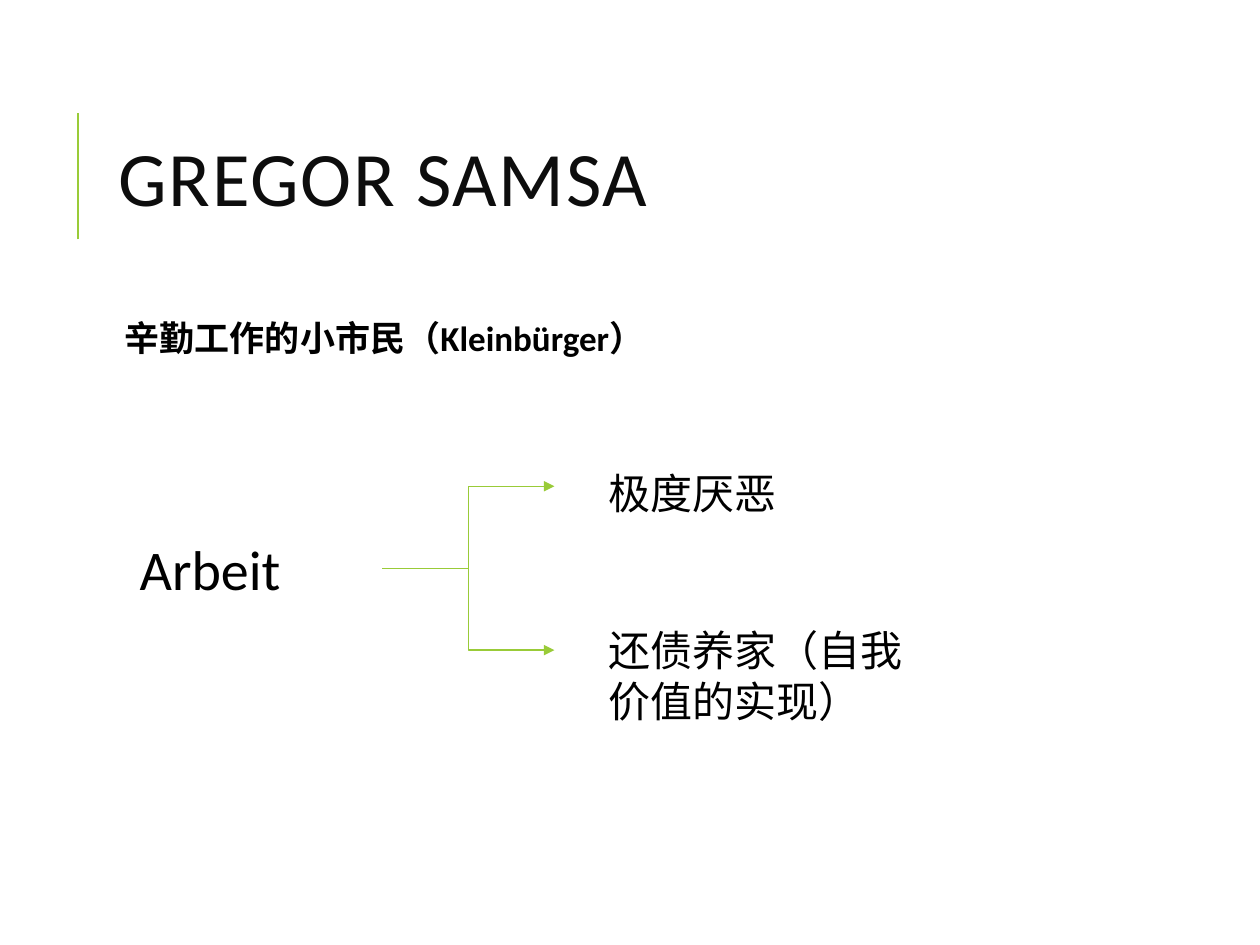
from dataclasses import dataclass

from lxml.etree import SubElement
from pptx import Presentation
from pptx.dml.color import RGBColor as Color
from pptx.enum.shapes import MSO_CONNECTOR as Connector
from pptx.enum.text import MSO_ANCHOR as Anchor, MSO_AUTO_SIZE as AutoSize, PP_ALIGN as Align
from pptx.oxml.ns import qn
from pptx.util import Inches, Pt

COLUMNS, ROWS = 100, 75


@dataclass(frozen=True)
class Theme:
    font: str = "Calibri"
    accent: str = "99CB38"
    heading: str = "0D0D0D"
    text: str = "000000"
    title_size: int = 44
    topic_size: int = 32
    label_size: int = 24
    body_size: int = 20
    rule_width: float = 1.5
    arrow_width: float = 0.75


def apply(target, formats):
    for name, value in formats.items():
        setattr(target, name, value)


class SlideBuilder:
    """Holds the theme and the current slide; lengths are grid columns and rows."""

    def __init__(self, presentation, theme):
        self.theme = theme
        self.column = presentation.slide_width / COLUMNS
        self.row = presentation.slide_height / ROWS
        self.slide = presentation.slides.add_slide(presentation.slide_layouts[1])

    def grid(self, *lengths):
        units = (self.column, self.row)
        return [round(length * units[i % 2]) for i, length in enumerate(lengths)]

    def place(self, shape, box):
        apply(shape, dict(zip(("left", "top", "width", "height"), self.grid(*box))))

    def add_text(self, shape, text, size, color=None, bold=False):
        paragraph = shape.text_frame.paragraphs[0]
        paragraph.alignment = Align.LEFT
        run = paragraph.add_run()
        run.text = text
        apply(run.font, {"name": self.theme.font, "size": Pt(size), "bold": bold})
        run.font.color.rgb = Color.from_string(color or self.theme.text)
        return paragraph, run

    def title(self, text, box):
        shape = self.slide.shapes.title
        self.place(shape, box)
        apply(shape.text_frame, {"vertical_anchor": Anchor.MIDDLE, "auto_size": AutoSize.NONE})
        paragraph, run = self.add_text(shape, text, self.theme.title_size, self.theme.heading)
        paragraph.line_spacing = 0.8
        run._r.get_or_add_rPr().set("spc", "100")

    def body(self, text, box):
        shape = self.slide.placeholders[1]
        self.place(shape, box)
        sides = ("left", "top", "right", "bottom")
        apply(shape.text_frame, {f"margin_{side}": Inches(0.05) for side in sides})
        apply(shape.text_frame, {"vertical_anchor": Anchor.TOP, "auto_size": AutoSize.NONE})
        paragraph, _ = self.add_text(shape, text, self.theme.body_size, bold=True)
        apply(paragraph, {"line_spacing": 0.9, "space_before": Pt(12), "space_after": Pt(2)})
        # Blank bullet with a hanging indent
        properties = paragraph._p.get_or_add_pPr()
        properties.set("marL", str(Inches(0.1)))
        properties.set("indent", str(-Inches(0.1)))
        bullet_color = SubElement(properties, qn("a:buClr"))
        SubElement(bullet_color, qn("a:srgbClr"), val=self.theme.accent)
        SubElement(properties, qn("a:buChar"), char=" ")

    def label(self, text, box, size):
        shape = self.slide.shapes.add_textbox(*self.grid(*box))
        apply(shape.text_frame, {"word_wrap": True, "auto_size": AutoSize.SHAPE_TO_FIT_TEXT})
        self.add_text(shape, text, size)

    def line(self, start, end, width, kind=Connector.STRAIGHT, arrow=False):
        connector = self.slide.shapes.add_connector(kind, *self.grid(*start, *end))
        connector.line.width = Pt(width)
        connector.line.color.rgb = Color.from_string(self.theme.accent)
        if arrow:
            SubElement(connector.line._get_or_add_ln(), qn("a:tailEnd"), type="triangle")
        SubElement(connector._element.spPr, qn("a:effectLst"))


def main():
    presentation = Presentation()
    apply(presentation, {"slide_width": Inches(10), "slide_height": Inches(7.5)})
    theme = Theme()
    builder = SlideBuilder(presentation, theme)

    # Heading with its accent rule
    builder.line((6.2, 19), (6.2, 9), theme.rule_width)
    builder.title("GREGOR SAMSA", (8.4, 6.4, 79.7, 16.4))
    builder.body("辛勤工作的小市民（Kleinbürger）", (8.4, 25, 79.7, 4.1))

    # Topic and its two branches
    builder.label("Arbeit", (10.1, 41.9, 17.5, 6.4), theme.topic_size)
    fork = (30.35, 45.1)
    branches = (
        ("极度厌恶", (47.3, 36.6, 15.4, 5.1), -6.5),
        ("还债养家（自我价值的实现）", (47.3, 49.1, 27.8, 9.1), 6.5),
    )
    for text, box, rise in branches:
        builder.line(fork, (44, fork[1] + rise), theme.arrow_width, Connector.ELBOW, arrow=True)
        builder.label(text, box, theme.label_size)

    presentation.save("out.pptx")


if __name__ == "__main__":
    main()
